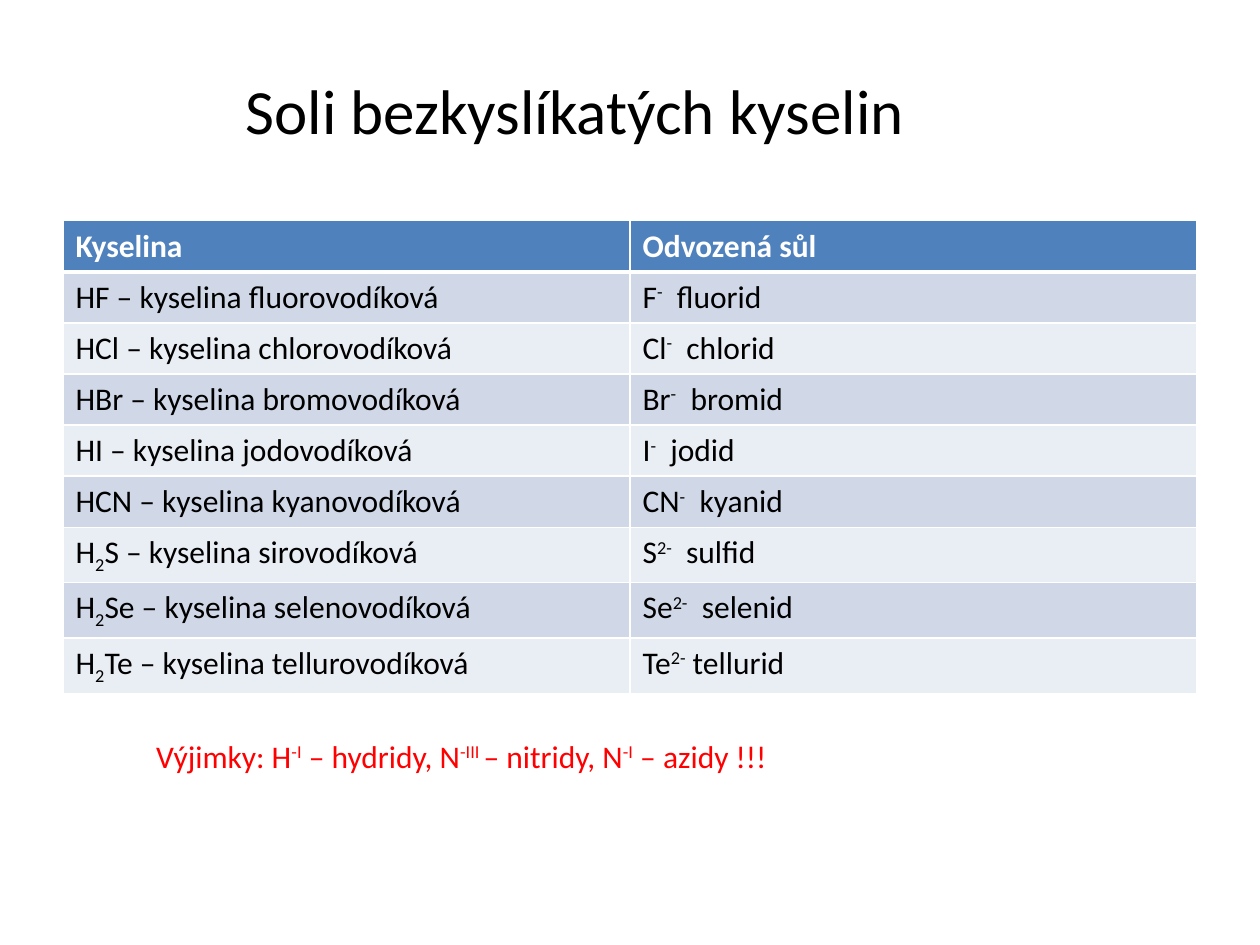
from dataclasses import dataclass
from typing import NamedTuple

from lxml import etree
from pptx import Presentation
from pptx.dml.color import RGBColor
from pptx.enum.text import MSO_ANCHOR, MSO_AUTO_SIZE
from pptx.oxml.ns import qn
from pptx.util import Cm, Pt

TOP = MSO_ANCHOR.TOP
GROW = MSO_AUTO_SIZE.SHAPE_TO_FIT_TEXT


@dataclass(frozen=True)
class Theme:
    font: str = "Calibri"
    title_size: int = 36
    body_size: int = 18
    black: str = "000000"
    white: str = "FFFFFF"
    warning: str = "FF0000"
    header: str = "4F81BD"
    bands: tuple[str, str] = ("D0D8E8", "E9EDF4")
    thin: int = 1
    thick: int = 3


class Piece(NamedTuple):
    """A stretch of text; baseline is its rise in percent of the type size."""
    text: str
    baseline: int = 0


class Style(NamedTuple):
    size: int
    color: str
    bold: bool = False


class Salt(NamedTuple):
    acid: list[Piece]
    ion: list[Piece]


class Box(NamedTuple):
    left: float
    top: float
    width: float
    height: float


THEME = Theme()


def sup(text: str) -> Piece:
    return Piece(text, 30)


def sub(text: str) -> Piece:
    return Piece(text, -25)


def halide(acid: str, ion: str, name: str) -> Salt:
    return Salt([Piece(acid)], [Piece(ion), sup("-"), Piece(name)])


def chalcogenide(element: str, acid: str, name: str) -> Salt:
    return Salt([Piece("H"), sub("2"), Piece(f"{element} – {acid}")],
                [Piece(element), sup("2-"), Piece(name)])


HEADINGS = ([Piece("Kyselina")], [Piece("Odvozená sůl")])
SALTS = [
    halide("HF – kyselina fluorovodíková", "F", "  fluorid"),
    halide("HCl – kyselina chlorovodíková", "Cl", "  chlorid"),
    halide("HBr – kyselina bromovodíková", "Br", "  bromid"),
    halide("HI – kyselina jodovodíková", "I", "  jodid"),
    halide("HCN – kyselina kyanovodíková", "CN", "  kyanid"),
    chalcogenide("S", "kyselina sirovodíková", "  sulfid"),
    chalcogenide("Se", "kyselina selenovodíková", "  selenid"),
    chalcogenide("Te", "kyselina tellurovodíková", " tellurid"),
]
TITLE = [Piece("Soli bezkyslíkatých kyselin")]
EXCEPTIONS = [
    Piece("Výjimky: H"), sup("-I"), Piece(" – hydridy, N"), sup("-III "),
    Piece("– nitridy, N"), sup("-I"), Piece(" – azidy !!!"),
]

TITLE_BOX = Box(4.7, 1.32, 13.92, 1.8)
TABLE_BOX = Box(1.27, 4.45, 22.86, 9.27)
EXCEPTIONS_BOX = Box(2.9, 14.73, 17.4, 1.03)


def write(tf, pieces: list[Piece], style: Style) -> None:
    p = tf.paragraphs[0]
    p.font.name = THEME.font
    p.font.size = Pt(style.size)
    p.font.bold = style.bold
    p.font.color.rgb = RGBColor.from_string(style.color)
    for piece in pieces:
        r = p.add_run()
        r.text = piece.text
        if piece.baseline:
            r.font._element.set("baseline", str(piece.baseline * 1000))


def add_text(slide, box: Box, pieces: list[Piece], style: Style, wrap: bool) -> None:
    sp = slide.shapes.add_textbox(*map(Cm, box))
    tf = sp.text_frame
    tf.word_wrap = wrap
    tf.auto_size = GROW
    write(tf, pieces, style)


def set_borders(cell, top: int, bottom: int) -> None:
    tc_pr = cell._tc.get_or_add_tcPr()
    widths = {"lnL": THEME.thin, "lnR": THEME.thin, "lnT": top, "lnB": bottom}
    for side, width in widths.items():
        ln = etree.SubElement(tc_pr, qn(f"a:{side}"), w=str(Pt(width)))
        fill = etree.SubElement(ln, qn("a:solidFill"))
        etree.SubElement(fill, qn("a:srgbClr"), val=THEME.white)


def add_salt_table(slide, box: Box) -> None:
    rows = [HEADINGS, *SALTS]
    table = slide.shapes.add_table(len(rows), len(HEADINGS), *map(Cm, box)).table
    heading = Style(THEME.body_size, THEME.white, bold=True)
    body = Style(THEME.body_size, THEME.black)
    for i, row in enumerate(rows):
        fill = THEME.bands[(i - 1) % 2] if i else THEME.header
        top = THEME.thick if i == 1 else THEME.thin
        bottom = THEME.thick if i == 0 else THEME.thin
        for j, pieces in enumerate(row):
            cell = table.cell(i, j)
            set_borders(cell, top, bottom)
            cell.fill.solid()
            cell.fill.fore_color.rgb = RGBColor.from_string(fill)
            cell.vertical_anchor = TOP
            write(cell.text_frame, pieces, body if i else heading)


def main() -> None:
    prs = Presentation()
    prs.slide_width, prs.slide_height = Cm(25.4), Cm(19.05)
    slide = prs.slides.add_slide(prs.slide_layouts[6])
    add_salt_table(slide, TABLE_BOX)
    add_text(slide, EXCEPTIONS_BOX, EXCEPTIONS,
             Style(THEME.body_size, THEME.warning), wrap=True)
    add_text(slide, TITLE_BOX, TITLE,
             Style(THEME.title_size, THEME.black), wrap=False)
    prs.save("out.pptx")


if __name__ == "__main__":
    main()
